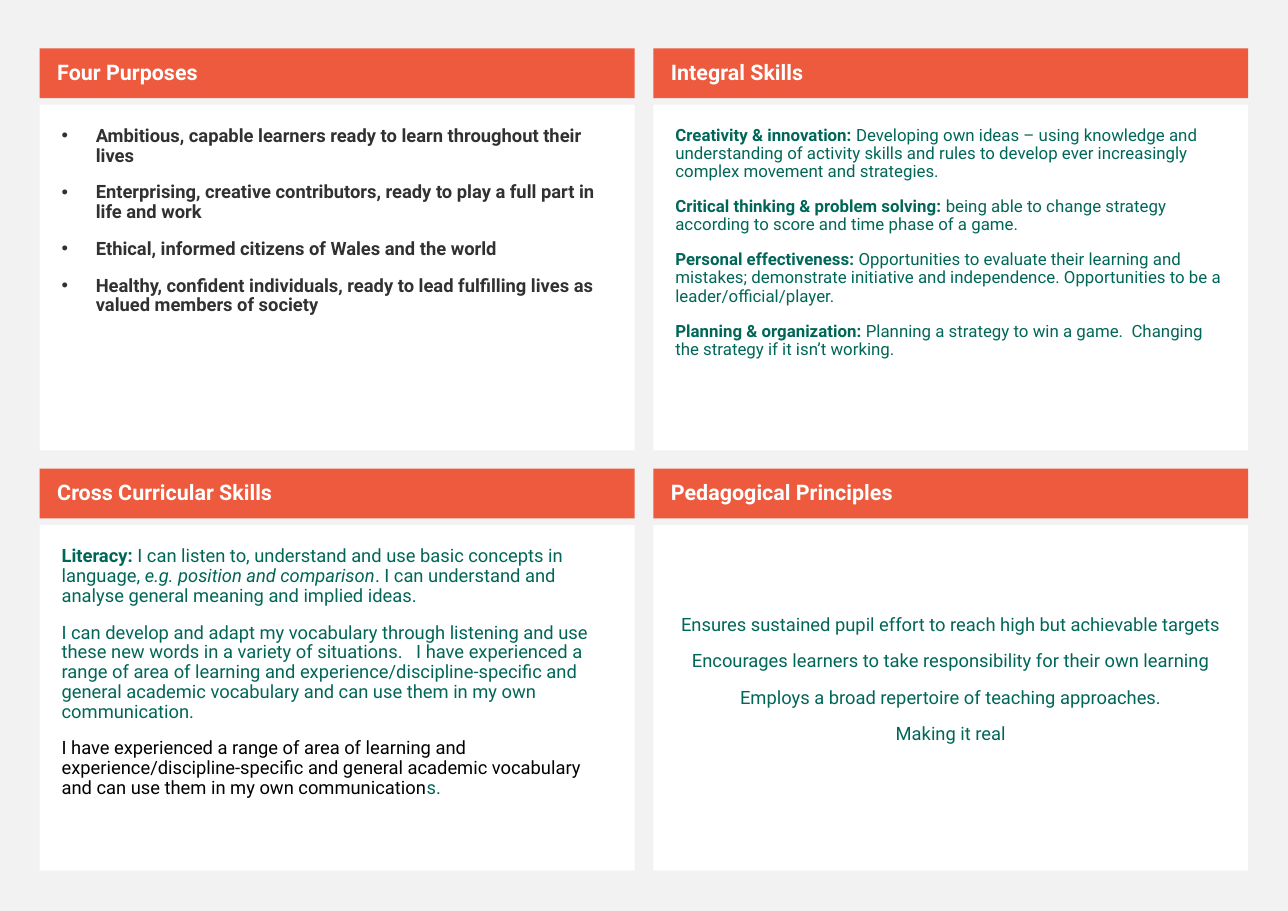
"""Build a four-panel curriculum overview slide."""
from lxml import etree
from pptx import Presentation
from pptx.dml.color import RGBColor
from pptx.enum.shapes import MSO_SHAPE
from pptx.enum.text import MSO_ANCHOR, PP_ALIGN
from pptx.oxml.ns import qn
from pptx.util import Inches, Pt

RECTANGLE = MSO_SHAPE.RECTANGLE
TOP, MIDDLE = MSO_ANCHOR.TOP, MSO_ANCHOR.MIDDLE
LEFT, CENTER = PP_ALIGN.LEFT, PP_ALIGN.CENTER

FONT = "Roboto"
GREY, ORANGE, WHITE = "F2F2F2", "ED5A3E", "FFFFFF"
CHARCOAL, GREEN, BLACK = "313131", "006758", "000000"
BOLD, ITALIC = {"bold": True}, {"italic": True}

PURPOSES = [
    [("Ambitious, capable learners ready to learn throughout their lives", BOLD)],
    [("Enterprising, creative contributors, ready to play a full part in life and work", BOLD)],
    [("Ethical, informed citizens of Wales and the world", BOLD)],
    [("Healthy, confident individuals, ready to lead fulfilling lives as valued members "
      "of society", BOLD)],
]
INTEGRAL = [
    [("Creativity & innovation: ", BOLD),
     ("Developing own ideas – using knowledge and understanding of activity skills and "
      "rules to develop ever increasingly complex movement and strategies.", {})],
    [("Critical thinking & problem solving: ", BOLD),
     ("being able to change strategy according to score and time phase of a game.", {})],
    [("Personal effectiveness: ", BOLD),
     ("Opportunities to evaluate their learning and mistakes; demonstrate initiative and "
      "independence. Opportunities to be a leader/official/player.", {})],
    [("Planning & organization:", BOLD),
     (" Planning a strategy to win a game.  Changing the strategy if it isn’t working.", {})],
]
CROSS = [
    [("Literacy: ", BOLD),
     ("I can listen to, understand and use basic concepts in language, ", {}),
     ("e.g. position and comparison", ITALIC),
     (". I can understand and analyse general meaning and implied ideas.", {})],
    [("I can develop and adapt my vocabulary through listening and use these new words in a "
      "variety of situations.   I have experienced a range of area of learning and "
      "experience/discipline-specific and general academic vocabulary and can use them in "
      "my own communication.", {})],
    [("I have experienced a range of area of learning and experience/discipline-specific and "
      "general academic vocabulary and can use them in my own communication",
      {"color": BLACK}),
     ("s.", {})],
]
PRINCIPLES = [
    [("Ensures sustained pupil effort to reach high but achievable targets", {})],
    [("Encourages learners to take responsibility for their own learning", {})],
    [("Employs a broad repertoire of teaching approaches.", {})],
    [("Making it real", {})],
]
PANELS = [
    ("Four Purposes", PURPOSES, {"color": CHARCOAL, "bullet": True}),
    ("Integral Skills", INTEGRAL, {"size": 11}),
    ("Cross Curricular Skills", CROSS, {}),
    ("Pedagogical Principles", PRINCIPLES, {"align": CENTER, "top_inset": 0.82}),
]

COLUMN_LEFT, COLUMN_STEP, PANEL_WIDTH = 0.36, 5.57, 5.4
ROW_TOP, ROW_STEP = 0.44, 3.815
HEADER_HEIGHT, BODY_OFFSET, BODY_HEIGHT = 0.45, 0.51, 3.14


def rgb(value):
    return RGBColor.from_string(value)


def add_box(page, left, top, height, fill, insets, anchor):
    box = page.shapes.add_shape(
        RECTANGLE, Inches(left), Inches(top), Inches(PANEL_WIDTH), Inches(height))
    box.shadow.inherit = False
    box.fill.solid()
    box.fill.fore_color.rgb = rgb(fill)
    box.line.fill.background()
    frame = box.text_frame
    frame.word_wrap = True
    frame.vertical_anchor = anchor
    (frame.margin_left, frame.margin_top,
     frame.margin_right, frame.margin_bottom) = map(Inches, insets)
    return frame


def add_bullet(para):
    properties = para._p.get_or_add_pPr()
    properties.set("marL", str(Inches(0.31)))
    properties.set("indent", str(Inches(-0.31)))
    etree.SubElement(properties, qn("a:buFont")).set("typeface", "Arial")
    etree.SubElement(properties, qn("a:buChar")).set("char", "•")


def write(frame, paragraphs, size=12, color=GREEN, align=LEFT, bullet=False):
    for index, spans in enumerate(paragraphs):
        para = frame.paragraphs[0] if index == 0 else frame.add_paragraph()
        para.alignment = align
        para.line_spacing = 0.9
        para.space_before = Pt(11)
        if bullet:
            add_bullet(para)
        para.font.name = FONT
        para.font.size = Pt(size)
        for text, style in spans:
            span = para.add_run()
            span.text = text
            span.font.bold = style.get("bold")
            span.font.italic = style.get("italic")
            span.font.color.rgb = rgb(style.get("color", color))


def add_panel(page, index, title, paragraphs, top_inset=0.2, **style):
    row, column = divmod(index, 2)
    left = COLUMN_LEFT + column * COLUMN_STEP
    top = ROW_TOP + row * ROW_STEP
    body = add_box(page, left, top + BODY_OFFSET, BODY_HEIGHT, WHITE,
                   (0.2, top_inset, 0.2, 0.2), TOP)
    write(body, paragraphs, **style)
    header = add_box(page, left, top, HEADER_HEIGHT, ORANGE,
                     (0.16, 0.05, 0.1, 0.05), MIDDLE)
    write(header, [[(title, BOLD)]], size=14, color=WHITE)


def main():
    deck = Presentation()
    deck.slide_width, deck.slide_height = Inches(11.69), Inches(8.27)
    page = deck.slides.add_slide(deck.slide_layouts[6])
    page.background.fill.solid()
    page.background.fill.fore_color.rgb = rgb(GREY)
    for index, (title, paragraphs, style) in enumerate(PANELS):
        add_panel(page, index, title, paragraphs, **style)
    deck.save("out.pptx")


if __name__ == "__main__":
    main()
